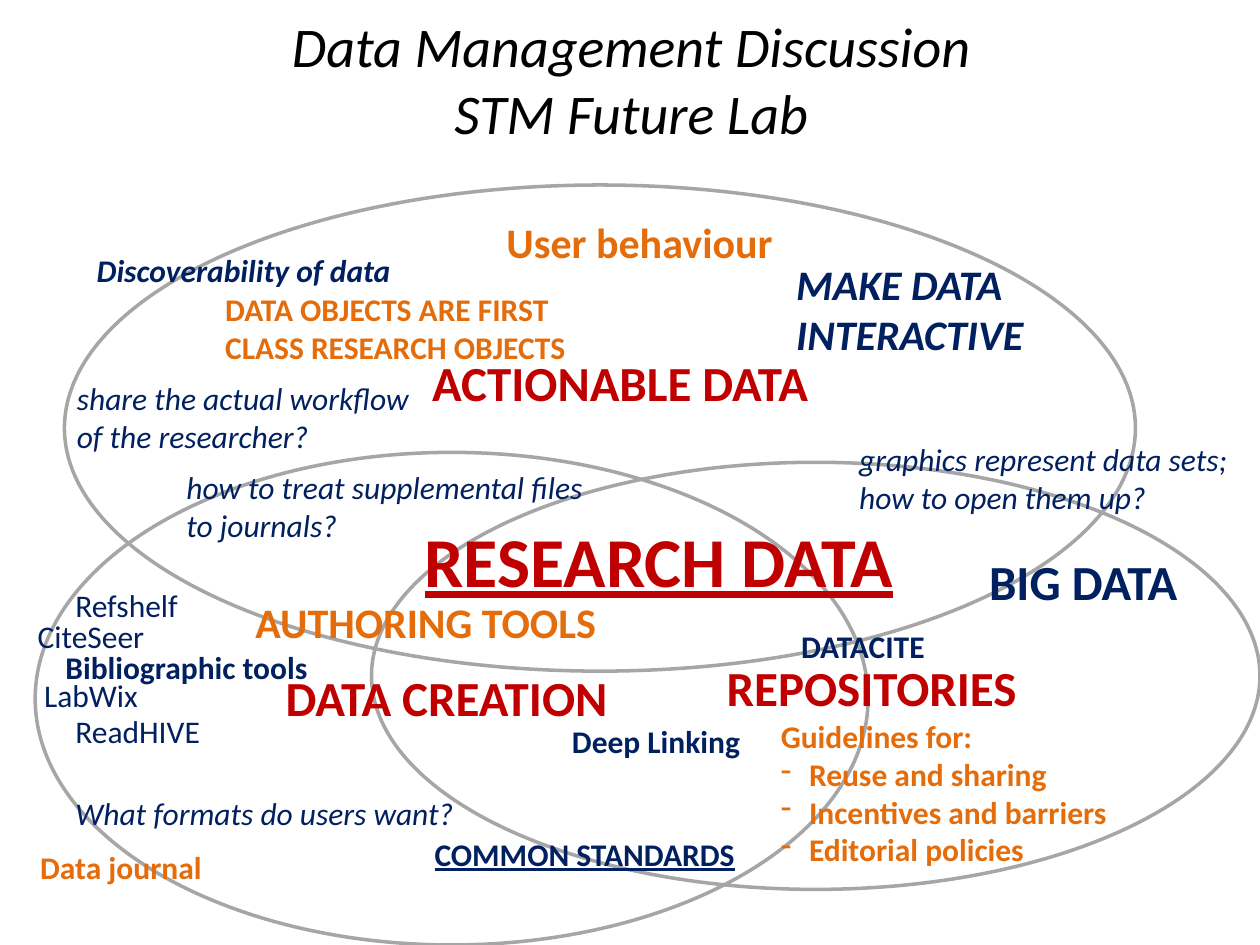
"""Build the data management discussion slide with its three overlapping themes."""
from dataclasses import dataclass

from lxml.etree import SubElement
from pptx import Presentation
from pptx.dml.color import RGBColor
from pptx.enum.shapes import MSO_SHAPE
from pptx.enum.text import MSO_ANCHOR, MSO_AUTO_SIZE, PP_ALIGN
from pptx.oxml.ns import qn
from pptx.slide import Slide
from pptx.text.text import _Paragraph
from pptx.util import Cm, Pt

BLACK = RGBColor(0x00, 0x00, 0x00)
GREY = RGBColor(0xA6, 0xA6, 0xA6)
RED = RGBColor(0xC0, 0x00, 0x00)
NAVY = RGBColor(0x00, 0x20, 0x60)
ORANGE = RGBColor(0xE4, 0x6C, 0x0A)


@dataclass
class Ring:
    left: float
    top: float
    width: float
    height: float


@dataclass
class Note:
    left: float
    top: float
    width: float
    text: tuple[str, ...]
    color: RGBColor = NAVY
    size: int = 18
    style: str = ""
    rows: int = 1
    wrap: bool = True


RINGS = [
    Ring(7.49, 9.32, 17.91, 8.61),
    Ring(0.71, 9.12, 16.79, 9.93),
    Ring(1.3, 3.73, 21.59, 9.8),
]

TITLE = Note(1.3, 0, 22.86, ("Data Management Discussion\nSTM Future Lab",), BLACK, 32, "i", 2)

NOTES = [
    Note(8.31, 10.31, 10.06, ("RESEARCH DATA",), RED, 40, "bu", wrap=False),
    Note(4.29, 5.72, 8.61, ("DATA OBJECTS ARE FIRST CLASS RESEARCH OBJECTS",), ORANGE, style="b", rows=2),
    Note(15.8, 5.08, 5.99, ("MAKE DATA INTERACTIVE",), size=24, style="bi", rows=2),
    Note(1.3, 7.52, 7.9, ("share the actual workflow", "of the researcher?"), style="i", rows=2),
    Note(17.07, 8.74, 9.8, ("graphics represent data sets;\nhow to open them up?",), style="i", rows=2),
    Note(8.46, 6.99, 8.99, ("ACTIONABLE DATA",), RED, 28, "b"),
    Note(5.51, 13.34, 7.39, ("DATA CREATION",), RED, 28, "b"),
    Note(1.27, 15.88, 10.59, ("What formats do users want?",), style="i"),
    Note(8.51, 16.71, 6.6, ("COMMON STANDARDS",), style="bu"),
    Note(4.9, 11.91, 7.39, ("AUTHORING TOOLS",), ORANGE, 24, "b"),
    Note(3.51, 9.32, 8.79, ("how to treat supplemental files to journals?",), style="i", rows=2),
    Note(15.49, 14.33, 7.8, ("Guidelines for:", "- Reuse and sharing", "- Incentives and barriers",
                             "- Editorial policies"), ORANGE, style="b", rows=4),
    Note(1.7, 4.93, 7.59, ("Discoverability of data",), style="bi"),
    Note(19.69, 11, 5, ("BIG DATA",), size=28, style="b"),
    Note(11.28, 14.43, 4.6, ("Deep Linking",), style="b"),
    Note(14.4, 13.13, 6.91, ("REPOSITORIES",), RED, 28, "b"),
    Note(15.9, 12.52, 3.4, ("DATACITE",), style="b"),
    Note(1.07, 12.93, 5.41, ("Bibliographic tools",), style="b"),
    Note(9.96, 4.24, 5.99, ("User behaviour",), ORANGE, 24, "b"),
    Note(1.27, 11.68, 3.61, ("Refshelf",)),
    Note(0.51, 12.32, 3.2, ("CiteSeer",)),
    Note(0.64, 13.51, 2.69, ("LabWix",)),
    Note(1.27, 14.22, 3.4, ("ReadHIVE",)),
    Note(0.56, 16.97, 4.29, ("Data journal",), ORANGE, style="b"),
]


def add_ring(slide: Slide, ring: Ring) -> None:
    shape = slide.shapes.add_shape(
        MSO_SHAPE.OVAL, Cm(ring.left), Cm(ring.top), Cm(ring.width), Cm(ring.height))
    shape.shadow.inherit = False
    shape.fill.background()
    shape.line.color.rgb = GREY
    shape.line.width = Pt(2)


def add_dash(para: _Paragraph) -> None:
    props = para._p.get_or_add_pPr()
    props.set("marL", str(Cm(0.57)))
    props.set("indent", str(-Cm(0.57)))
    SubElement(props, qn("a:buChar")).set("char", "-")


def add_text(para: _Paragraph, text: str, note: Note) -> None:
    for index, line in enumerate(text.split("\n")):
        if index:
            para.add_line_break()
        run = para.add_run()
        run.text = line
        font = run.font
        font.name = "Calibri"
        font.size = Pt(note.size)
        font.color.rgb = note.color
        font.bold = "b" in note.style
        font.italic = "i" in note.style
        font.underline = "u" in note.style


def add_note(slide: Slide, note: Note, title: bool = False) -> None:
    height = 3.18 if title else round(note.rows * note.size * 0.043 + 0.25, 2)
    box = slide.shapes.add_textbox(Cm(note.left), Cm(note.top), Cm(note.width), Cm(height))
    frame = box.text_frame
    frame.word_wrap = note.wrap
    frame.auto_size = MSO_AUTO_SIZE.NONE if title else MSO_AUTO_SIZE.SHAPE_TO_FIT_TEXT
    frame.vertical_anchor = MSO_ANCHOR.MIDDLE if title else MSO_ANCHOR.TOP
    for index, text in enumerate(note.text):
        para = frame.add_paragraph() if index else frame.paragraphs[0]
        para.alignment = PP_ALIGN.CENTER if title else PP_ALIGN.LEFT
        if text.startswith("- "):
            add_dash(para)
        add_text(para, text.removeprefix("- "), note)


def main() -> None:
    deck = Presentation()
    deck.slide_width, deck.slide_height = Cm(25.4), Cm(19.05)
    slide = deck.slides.add_slide(deck.slide_layouts[6])
    for ring in RINGS:
        add_ring(slide, ring)
    add_note(slide, TITLE, title=True)
    for note in NOTES:
        add_note(slide, note)
    deck.save("out.pptx")


if __name__ == "__main__":
    main()
